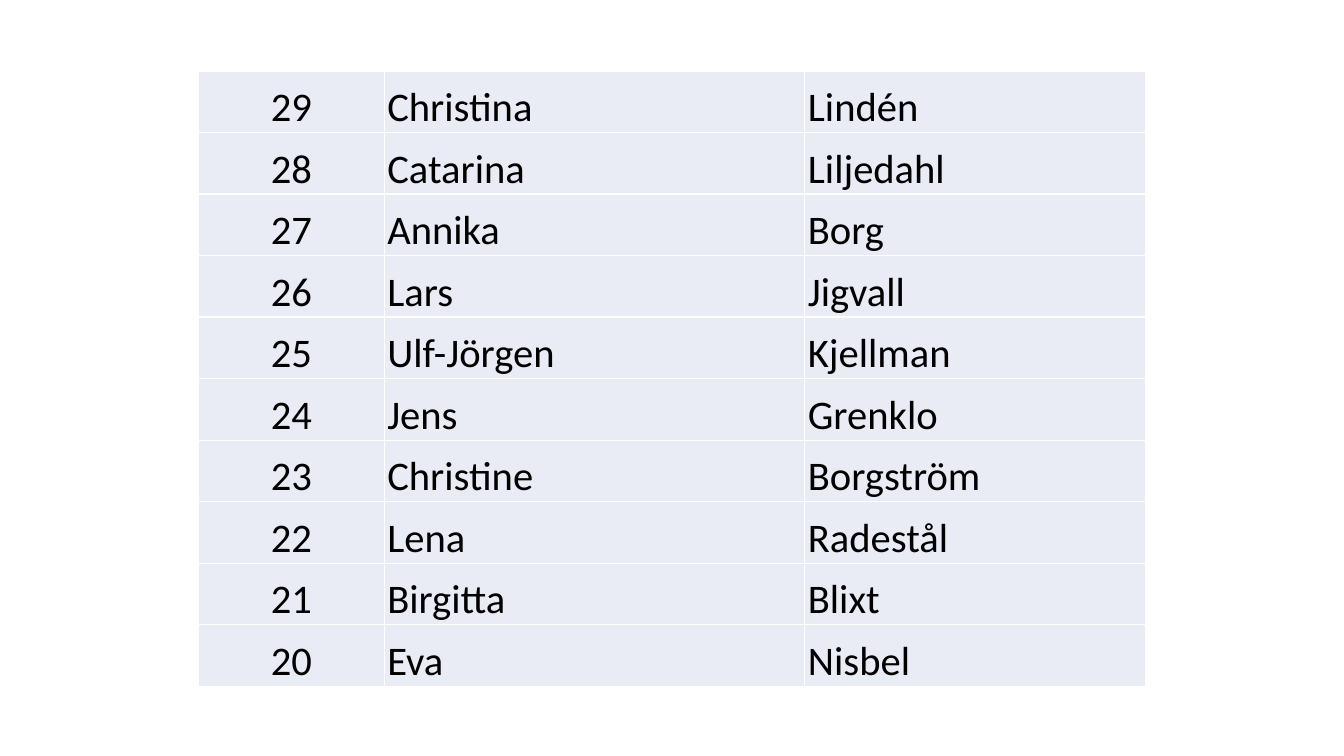
"""Build a slide with a numbered table of first names and surnames."""
from dataclasses import dataclass

import lxml.etree
import pptx
import pptx.dml.color
import pptx.enum.text
import pptx.oxml.ns
import pptx.table
import pptx.util

Cm = pptx.util.Cm
Pt = pptx.util.Pt
RGBColor = pptx.dml.color.RGBColor
Align = pptx.enum.text.PP_ALIGN

BLACK = RGBColor(0x00, 0x00, 0x00)
WHITE = RGBColor(0xFF, 0xFF, 0xFF)
PALE_BLUE = RGBColor(0xE9, 0xEB, 0xF5)
FONT = "Calibri"
ROW_HEIGHT = Cm(1.55)


@dataclass(frozen=True)
class Column:
    width: pptx.util.Length
    align: Align


@dataclass(frozen=True)
class Person:
    number: int
    first_name: str
    surname: str


COLUMNS = [
    Column(Cm(4.67), Align.CENTER),
    Column(Cm(10.6), Align.LEFT),
    Column(Cm(8.58), Align.LEFT),
]
PEOPLE = [
    Person(29, "Christina", "Lindén"),
    Person(28, "Catarina", "Liljedahl"),
    Person(27, "Annika", "Borg"),
    Person(26, "Lars", "Jigvall"),
    Person(25, "Ulf-Jörgen", "Kjellman"),
    Person(24, "Jens", "Grenklo"),
    Person(23, "Christine", "Borgström"),
    Person(22, "Lena", "Radestål"),
    Person(21, "Birgitta", "Blixt"),
    Person(20, "Eva", "Nisbel"),
]


def add_borders(cell: pptx.table._Cell, color: RGBColor) -> None:
    qn = pptx.oxml.ns.qn
    properties = cell._tc.get_or_add_tcPr()
    for side in ("a:lnL", "a:lnR", "a:lnT", "a:lnB"):
        border = lxml.etree.SubElement(properties, qn(side), w=str(Pt(1)))
        fill = lxml.etree.SubElement(border, qn("a:solidFill"))
        lxml.etree.SubElement(fill, qn("a:srgbClr"), val=str(color))


def fill_cell(cell: pptx.table._Cell, text: str, align: Align) -> None:
    add_borders(cell, WHITE)
    cell.fill.solid()
    cell.fill.fore_color.rgb = PALE_BLUE
    cell.vertical_anchor = pptx.enum.text.MSO_ANCHOR.BOTTOM
    cell.margin_left = cell.margin_right = cell.margin_top = Cm(0.08)
    cell.margin_bottom = Cm(0)
    paragraph = cell.text_frame.paragraphs[0]
    paragraph.text = text
    paragraph.alignment = align
    font = paragraph.runs[0].font
    font.name = FONT
    font.size = Pt(29)
    font.color.rgb = BLACK


def main() -> None:
    presentation = pptx.Presentation()
    presentation.slide_width = Cm(33.87)
    presentation.slide_height = Cm(19.05)
    slide = presentation.slides.add_slide(presentation.slide_layouts[6])

    people_table = slide.shapes.add_table(
        len(PEOPLE), len(COLUMNS), Cm(5.01), Cm(1.79),
        sum(column.width for column in COLUMNS), ROW_HEIGHT * len(PEOPLE),
    ).table
    people_table.first_row = False
    people_table.horz_banding = False
    for table_column, column in zip(people_table.columns, COLUMNS):
        table_column.width = column.width
    for row, person in zip(people_table.rows, PEOPLE):
        row.height = ROW_HEIGHT
        texts = (str(person.number), person.first_name, person.surname)
        for cell, text, column in zip(row.cells, texts, COLUMNS):
            fill_cell(cell, text, column.align)

    presentation.save("out.pptx")


if __name__ == "__main__":
    main()
